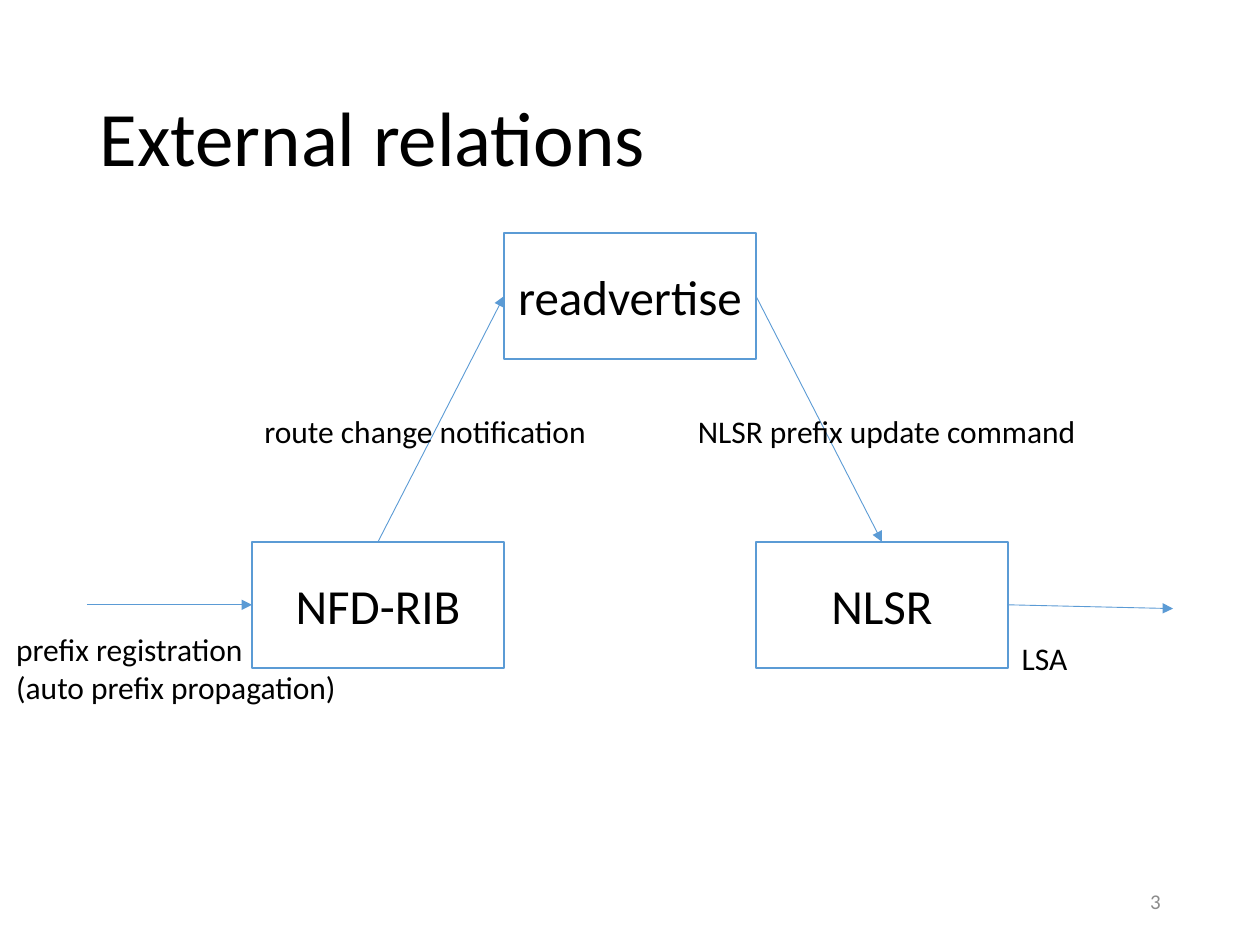
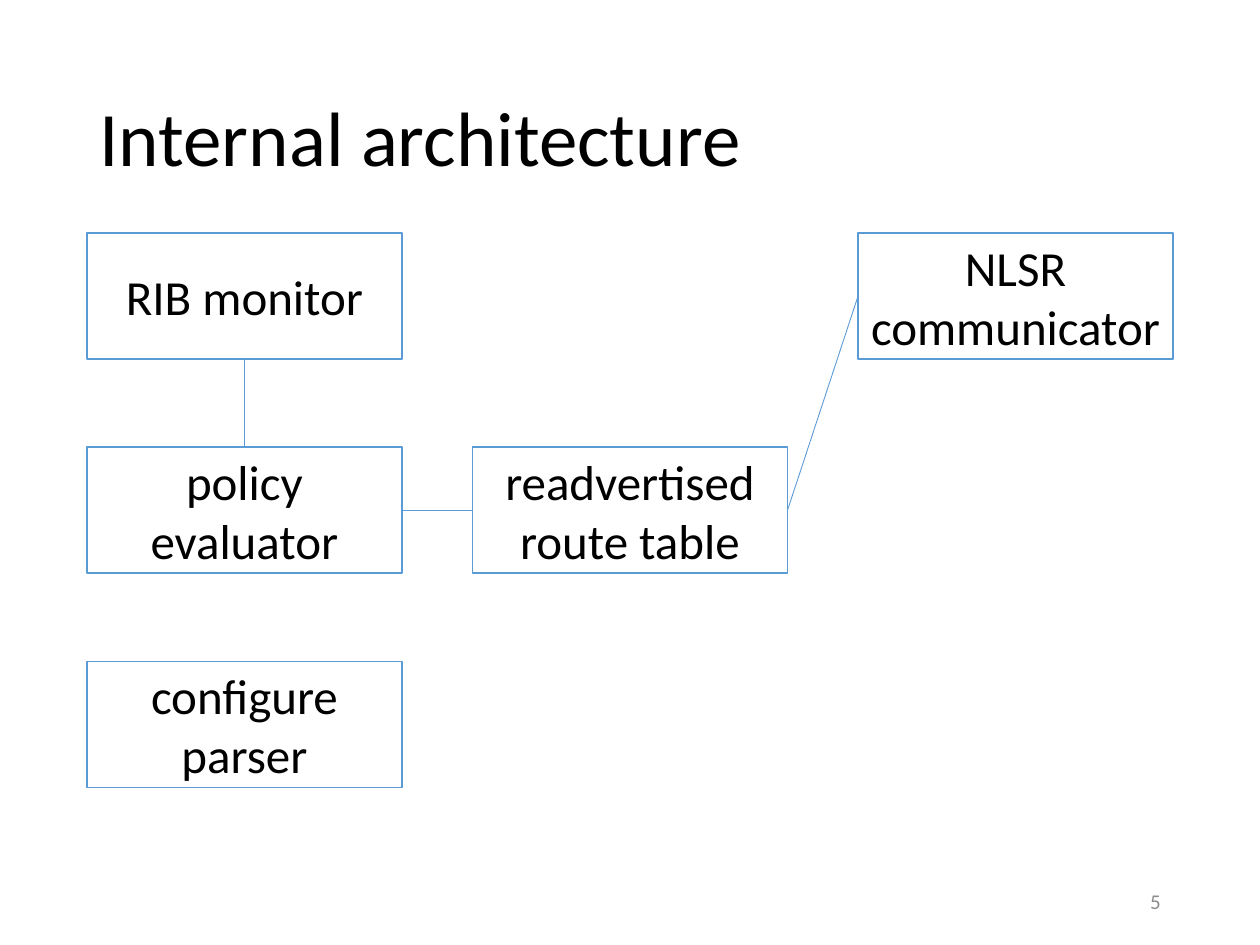
from lxml.etree import SubElement
from pptx import Presentation
from pptx.dml.color import RGBColor
from pptx.enum.shapes import MSO_CONNECTOR, MSO_SHAPE
from pptx.enum.text import MSO_ANCHOR, MSO_AUTO_SIZE, PP_ALIGN
from pptx.oxml.ns import qn
from pptx.util import Inches, Pt

COLORS = {"text": "000000", "number": "8C8C8C", "line": "5B9BD5", "box": "FFFFFF"}
FONT = "Calibri"
LEFT, RIGHT, TOP = 0.69, 9.31, 1.85
BOX_H = 1
SITES = {"top": 0, "left": 1, "bottom": 2, "right": 3}

# Internal architecture grid: three columns across the margins, three rows
CELL_W, ROW_STEP = 2.5, 1.7
COL_STEP = (RIGHT - LEFT - CELL_W) / 2


def cell(col, row):
    return LEFT + col * COL_STEP, TOP + row * ROW_STEP


# boxes: text -> (left, top); links: ends are (box, side) or a free (x, y) point
SLIDES = [
    {
        "title": "External relations",
        "number": 3,
        "box_w": 2,
        "boxes": {"NFD-RIB": (2, 4.3), "NLSR": (6, 4.3), "readvertise": (4, TOP)},
        "arrows": True,
        "links": [
            ((LEFT, 4.8), ("NFD-RIB", "left")),
            (("NFD-RIB", "top"), ("readvertise", "left")),
            (("readvertise", "right"), ("NLSR", "top")),
            (("NLSR", "right"), (RIGHT, 4.83)),
        ],
        "labels": [
            (["prefix registration", "(auto prefix propagation)"], 0.03, 4.95, 2.77, 0.71),
            (["route change notification"], 2, 3.22, 2.79, 0.4),
            (["NLSR prefix update command"], 5.44, 3.22, 3.24, 0.4),
            (["LSA"], 8.01, 5.02, 0.57, 0.4),
        ],
    },
    {
        "title": "Internal architecture",
        "number": 5,
        "box_w": CELL_W,
        "boxes": {
            "RIB monitor": cell(0, 0),
            "policy evaluator": cell(0, 1),
            "readvertised route table": cell(1, 1),
            "NLSR communicator": cell(2, 0),
            "configure parser": cell(0, 2),
        },
        "arrows": False,
        "links": [
            (("RIB monitor", "bottom"), ("policy evaluator", "top")),
            (("policy evaluator", "right"), ("readvertised route table", "left")),
            (("readvertised route table", "right"), ("NLSR communicator", "left")),
        ],
        "labels": [],
    },
]


def rgb(name):
    return RGBColor.from_string(COLORS[name])


def write(shape, lines, size, color="text", align=PP_ALIGN.LEFT, anchor=MSO_ANCHOR.MIDDLE,
          wrap=True):
    tf = shape.text_frame
    tf.text = "\n".join(lines)
    tf.word_wrap = wrap
    tf.vertical_anchor = anchor
    for p in tf.paragraphs:
        p.alignment = align
        p.font.name, p.font.size = FONT, Pt(size)
        p.font.color.rgb = rgb(color)
    return tf


def add_title(s, text):
    title = s.shapes.title
    title.left, title.top = Inches(LEFT), Inches(0.4)
    title.width, title.height = Inches(RIGHT - LEFT), Inches(1.45)
    tf = write(title, [text], 44)
    tf.auto_size = MSO_AUTO_SIZE.NONE
    tf.paragraphs[0].line_spacing = 0.9


def add_number(s, number):
    sp = s.shapes.add_textbox(Inches(RIGHT - 2.25), Inches(6.95), Inches(2.25), Inches(0.4))
    write(sp, [str(number)], 12, "number", PP_ALIGN.RIGHT)


def add_box(s, text, left, top, width):
    sp = s.shapes.add_shape(MSO_SHAPE.RECTANGLE, Inches(left), Inches(top),
                            Inches(width), Inches(BOX_H))
    sp.shadow.inherit = False
    sp.fill.solid()
    sp.fill.fore_color.rgb = rgb("box")
    sp.line.color.rgb = rgb("line")
    sp.line.width = Pt(1)
    write(sp, [text], 28, align=PP_ALIGN.CENTER)
    return sp


def add_link(s, boxes, start, end, arrow):
    """Draw a line whose ends are glued to box sides or sit at free points."""
    points = [(0, 0) if e[0] in boxes else e for e in (start, end)]
    link = s.shapes.add_connector(MSO_CONNECTOR.STRAIGHT,
                                  *(Inches(v) for point in points for v in point))
    for connect, (box, side) in ((link.begin_connect, start), (link.end_connect, end)):
        if box in boxes:
            connect(boxes[box], SITES[side])
    link.line.color.rgb = rgb("line")
    link.line.width = Pt(0.5)
    if arrow:
        SubElement(link.line._get_or_add_ln(), qn("a:tailEnd"), type="triangle")
    SubElement(link._element.spPr, qn("a:effectLst"))


def add_label(s, lines, *place):
    sp = s.shapes.add_textbox(*map(Inches, place))
    tf = write(sp, lines, 18, anchor=MSO_ANCHOR.TOP, wrap=False)
    tf.auto_size = MSO_AUTO_SIZE.SHAPE_TO_FIT_TEXT


def main():
    prs = Presentation()
    prs.slide_width, prs.slide_height = Inches(10), Inches(7.5)
    for content in SLIDES:
        s = prs.slides.add_slide(prs.slide_layouts[5])
        add_title(s, content["title"])
        add_number(s, content["number"])
        boxes = {text: add_box(s, text, *place, content["box_w"])
                 for text, place in content["boxes"].items()}
        for start, end in content["links"]:
            add_link(s, boxes, start, end, content["arrows"])
        for lines, *place in content["labels"]:
            add_label(s, lines, *place)
    prs.save("out.pptx")


if __name__ == "__main__":
    main()
